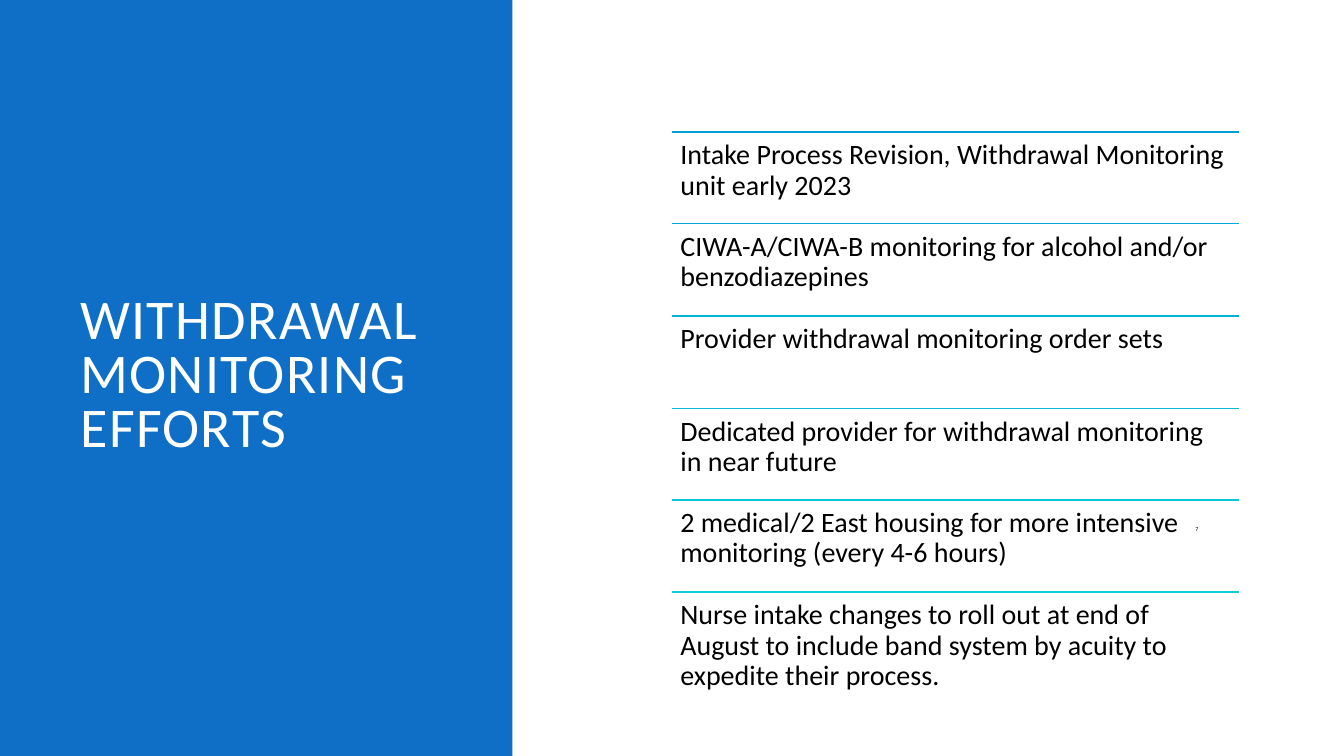
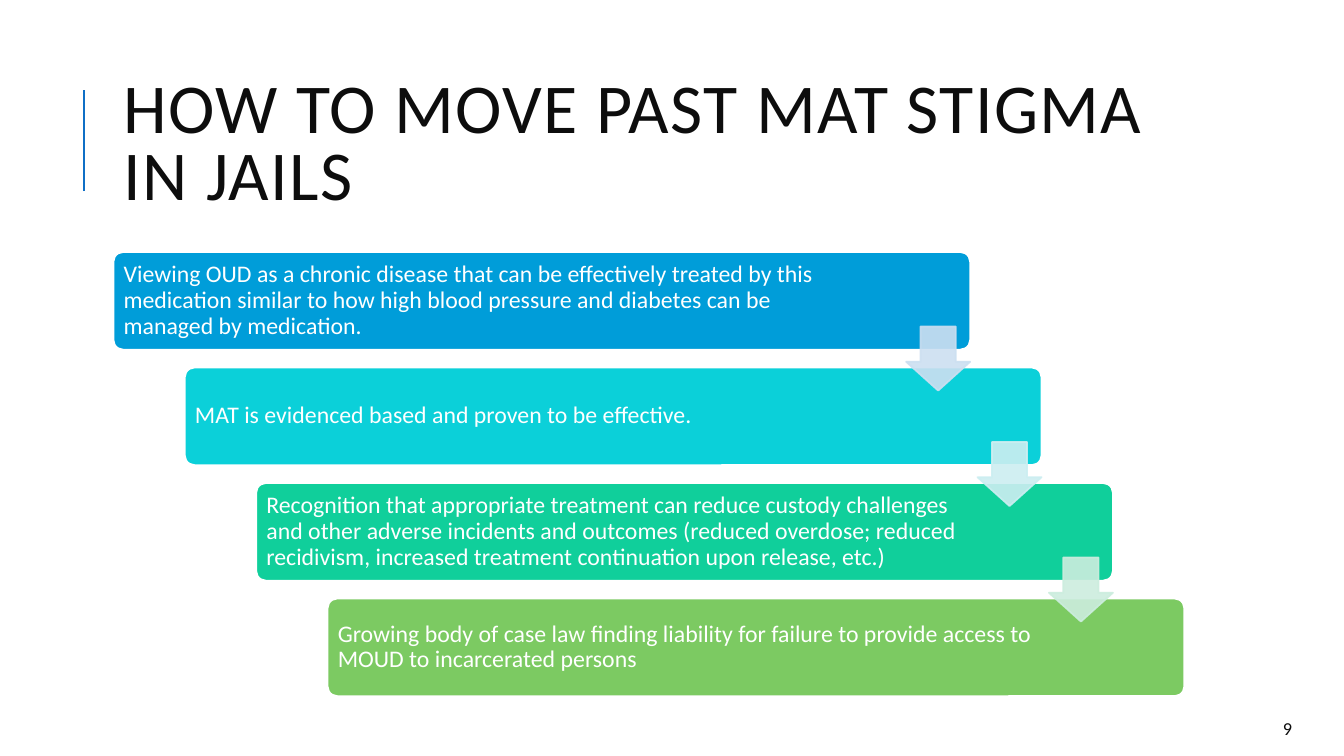
from dataclasses import dataclass

from lxml import etree
from pptx import Presentation
from pptx import util as u
from pptx.dml.color import RGBColor
from pptx.enum import shapes, text
from pptx.oxml import ns

PX = 9525
TITLE_ONLY = 5
TOP, MIDDLE = text.MSO_ANCHOR.TOP, text.MSO_ANCHOR.MIDDLE
LEFT, RIGHT = text.PP_ALIGN.LEFT, text.PP_ALIGN.RIGHT


@dataclass(frozen=True)
class Theme:
    font: str = "Calibri"
    white: str = "FFFFFF"
    black: str = "000000"
    ink: str = "0D0D0D"
    blue: str = "0F6FC6"
    rule_first: str = "009DD9"
    rule_last: str = "0BD0D9"
    side_title: int = 40
    top_title: int = 50
    row: int = 20
    step: int = 17
    number: int = 13
    tiny_number: float = 4.3
    thin: float = 1.25
    accent_rule: float = 1.5


THEME = Theme()

EFFORTS = [
    "Intake Process Revision, Withdrawal Monitoring unit early 2023",
    "CIWA-A/CIWA-B monitoring for alcohol and/or benzodiazepines",
    "Provider withdrawal monitoring order sets",
    "Dedicated provider for withdrawal monitoring in near future",
    "2 medical/2 East housing for more intensive monitoring (every 4-6 hours)",
    "Nurse intake changes to roll out at end of August to include band system "
    "by acuity to expedite their process.",
]

# Wording, bar colour, right inset
STEPS = [
    ("Viewing OUD as a chronic disease that can be effectively treated by this "
     "medication similar to how high blood pressure and diabetes can be managed "
     "by medication.", "009DD9", 108),
    ("MAT is evidenced based and proven to be effective.", "0BD0D9", 134),
    ("Recognition that appropriate treatment can reduce custody challenges and "
     "other adverse incidents and outcomes (reduced overdose; reduced recidivism, "
     "increased treatment continuation upon release, etc.)", "10CF9B", 134),
    ("Growing body of case law finding liability for failure to provide access "
     "to MOUD to incarcerated persons", "7CCA62", 134),
]
ARROW_COLOURS = ["CCDFF1", "CCEEF1", "CCEDDE"]


def px(*lengths):
    return [u.Emu(length * PX) for length in lengths]


def rgb(colour):
    return RGBColor.from_string(colour)


def blend(first, last, share):
    """Mix two colours; share 0 gives the first and 1 the last."""
    return "".join(f"{round(a + (b - a) * share):02X}"
                   for a, b in zip(rgb(first), rgb(last)))


def assign(target, values):
    for name, value in values.items():
        setattr(target, name, value)


def write(shape, wording, size, colour, anchor=TOP, align=LEFT, leading=0.9,
          insets=None, tracking=None):
    """Fill a shape with one paragraph; insets are left, top, right, bottom in px."""
    frame = shape.text_frame
    assign(frame, {"text": wording, "word_wrap": True, "vertical_anchor": anchor,
                   "auto_size": text.MSO_AUTO_SIZE.NONE})
    if insets:
        sides = ("margin_left", "margin_top", "margin_right", "margin_bottom")
        assign(frame, dict(zip(sides, px(*insets))))
    paragraph = frame.paragraphs[0]
    assign(paragraph, {"alignment": align, "line_spacing": leading})
    run = paragraph.runs[0]
    assign(run.font, {"name": THEME.font, "size": u.Pt(size)})
    run.font.color.rgb = rgb(colour)
    if tracking:
        run.font._element.set("spc", str(tracking))


def add_title(slide, wording, box, size, colour):
    title = slide.shapes.title
    assign(title, dict(zip(("left", "top", "width", "height"), px(*box))))
    write(title, wording, size, colour, anchor=MIDDLE, leading=0.8, tracking=100)


def add_label(slide, wording, box, size, colour, **style):
    write(slide.shapes.add_textbox(*px(*box)), wording, size, colour, **style)


def add_rule(slide, start, end, colour, width):
    rule = slide.shapes.add_connector(shapes.MSO_CONNECTOR.STRAIGHT, *px(*start, *end))
    rule.line.color.rgb = rgb(colour)
    rule.line.width = u.Pt(width)
    etree.SubElement(rule._element.spPr, ns.qn("a:effectLst"))


def add_block(slide, kind, box, fill, outline=None, adjustments=(), opacity=None):
    block = slide.shapes.add_shape(kind, *px(*box))
    block.shadow.inherit = False
    for index, value in enumerate(adjustments):
        block.adjustments[index] = value
    block.fill.solid()
    block.fill.fore_color.rgb = rgb(fill)
    if outline:
        block.line.color.rgb = rgb(outline)
        block.line.width = u.Pt(THEME.thin)
    else:
        block.line.fill.background()
    if opacity:
        for colour in block._element.spPr.iter(ns.qn("a:srgbClr")):
            etree.SubElement(colour, ns.qn("a:alpha"), val=str(opacity * 1000))
    return block


def add_ruled_list(slide, items, left, top, width, height):
    last = len(items) - 1
    for index, item in enumerate(items):
        y = top + height * index // len(items)
        colour = blend(THEME.rule_first, THEME.rule_last, index / last)
        add_rule(slide, (left, y), (left + width, y), colour, THEME.thin)
        add_label(slide, item, (left, y, width, height // len(items)),
                  THEME.row, THEME.black, insets=(8, 8, 8, 8))


def add_staircase(slide, left, top):
    """Draw bars stepping down to the right, with an arrow over each gap."""
    def step_box(index, x, y, width, height):
        return left + 68 * index + x, top + 110 * index + y, width, height

    for index, (wording, colour, right_inset) in enumerate(STEPS):
        bar = add_block(slide, shapes.MSO_SHAPE.ROUNDED_RECTANGLE,
                        step_box(index, 0, 0, 816, 93), colour, THEME.white, [0.1])
        write(bar, wording, THEME.step, THEME.white, anchor=MIDDLE,
              insets=(7, 4, right_inset, 4))
    for index, colour in enumerate(ARROW_COLOURS):
        add_block(slide, shapes.MSO_SHAPE.DOWN_ARROW, step_box(index, 755, 71, 61, 61),
                  colour, colour, [0.45, 0.55], opacity=90)
        arrow = slide.shapes[-1]
        assign_adjustments = {0: 0.55, 1: 0.45}
        for position, value in assign_adjustments.items():
            arrow.adjustments[position] = value


def build_efforts(slide):
    band = add_block(slide, shapes.MSO_SHAPE.RECTANGLE, (0, 0, 488, 720), THEME.blue)
    slide.shapes.title._element.addprevious(band._element)
    add_title(slide, "WITHDRAWAL MONITORING EFFORTS", (67, 67, 359, 585),
              THEME.side_title, THEME.white)
    add_label(slide, "7", (1129, 498, 52, 14), THEME.tiny_number, THEME.black,
              leading=0.7)
    add_ruled_list(slide, EFFORTS, 640, 126, 540, 526)


def build_stigma(slide):
    add_rule(slide, (80, 182), (80, 86), THEME.blue, THEME.accent_rule)
    add_title(slide, "HOW TO MOVE PAST MAT STIGMA IN JAILS", (108, 61, 1020, 157),
              THEME.top_title, THEME.ink)
    add_label(slide, "9", (1138, 680, 102, 29), THEME.number, THEME.ink,
              anchor=MIDDLE, align=RIGHT)
    add_staircase(slide, 108, 240)


def main():
    deck = Presentation()
    deck.slide_width, deck.slide_height = px(1280, 720)
    for build in (build_efforts, build_stigma):
        build(deck.slides.add_slide(deck.slide_layouts[TITLE_ONLY]))
    deck.save("out.pptx")


if __name__ == "__main__":
    main()
